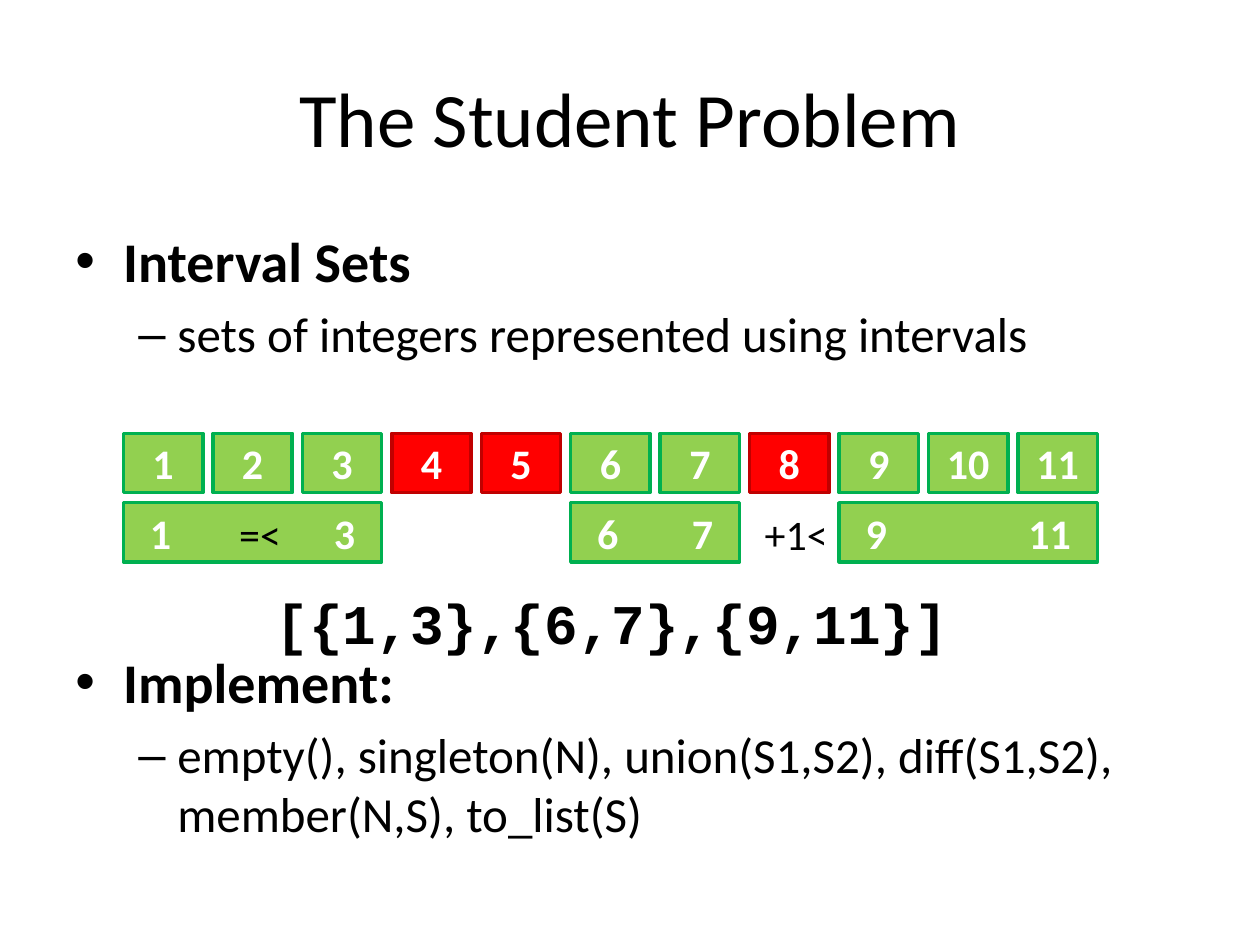
from dataclasses import dataclass

from lxml import etree
from pptx import Presentation
from pptx.dml.color import RGBColor
from pptx.enum.shapes import MSO_SHAPE
from pptx.enum.text import MSO_ANCHOR, PP_ALIGN
from pptx.oxml.ns import qn
from pptx.util import Inches, Pt

RECT = MSO_SHAPE.RECTANGLE
MIDDLE, TOP = MSO_ANCHOR.MIDDLE, MSO_ANCHOR.TOP
CENTER, LEFT = PP_ALIGN.CENTER, PP_ALIGN.LEFT


@dataclass(frozen=True)
class Theme:
    text: str = "000000"
    on_fill: str = "FFFFFF"
    member: tuple = ("92D050", "00B050")
    gap: tuple = ("FF0000", "C00000")
    font: str = "Calibri"
    code_font: str = "Courier New"
    title_size: int = 44
    head_size: int = 32
    item_size: int = 28
    cell_size: int = 24


THEME = Theme()
GRID_LEFT, CELL_W, CELL_H, PITCH = 0.98, 0.63, 0.47, 0.71
NUMBERS_TOP, INTERVALS_TOP = 3.44, 3.99
INTERVALS = [(1, 3), (6, 7), (9, 11)]
END_INSET = 0.21

# text, level, space before in points
OUTLINE = [
    ("Interval Sets", 0, 0),
    ("sets of integers represented using intervals", 1, 5.6),
    ("Implement:", 0, 163),
    ("empty(), singleton(N), union(S1,S2), diff(S1,S2), member(N,S), to_list(S)", 1, 5.6),
]
# bullet, left margin, hanging indent in inches, type size, bold
LEVELS = [
    ("•", 0.38, 0.38, THEME.head_size, True),
    ("–", 0.81, 0.31, THEME.item_size, False),
]


def write(p, text, size, color=THEME.text, bold=False, font=THEME.font):
    r = p.add_run()
    r.text = text
    for name, value in {"size": Pt(size), "bold": bold, "name": font}.items():
        setattr(r.font, name, value)
    r.font.color.rgb = RGBColor.from_string(color)


def add_text_box(s, left, top, width, height, anchor=TOP):
    box = s.shapes.add_textbox(Inches(left), Inches(top), Inches(width), Inches(height))
    tf = box.text_frame
    tf.word_wrap = True
    tf.vertical_anchor = anchor
    return tf


def add_block(s, first, last, top, colors):
    """Add a rectangle covering the grid columns first to last."""
    left = GRID_LEFT + (first - 1) * PITCH
    width = (last - first) * PITCH + CELL_W
    sp = s.shapes.add_shape(RECT, Inches(left), Inches(top), Inches(width), Inches(CELL_H))
    sp.shadow.inherit = False
    fill, line = colors
    sp.fill.solid()
    sp.fill.fore_color.rgb = RGBColor.from_string(fill)
    sp.line.color.rgb = RGBColor.from_string(line)
    sp.line.width = Pt(2)
    sp.text_frame.vertical_anchor = MIDDLE
    return sp.text_frame, width


def set_tabs(p, *stops):
    tabs = etree.SubElement(p._p.get_or_add_pPr(), qn("a:tabLst"))
    for pos, align in stops:
        etree.SubElement(tabs, qn("a:tab"), pos=str(Inches(pos)), algn=align)


def set_bullet(p, char, margin, hanging):
    pPr = p._p.get_or_add_pPr()
    pPr.set("marL", str(Inches(margin)))
    pPr.set("indent", str(-Inches(hanging)))
    etree.SubElement(pPr, qn("a:buFont"), typeface="Arial")
    etree.SubElement(pPr, qn("a:buChar"), char=char)


def add_title(s, text):
    p = add_text_box(s, 0.5, 0.3, 9, 1.25, MIDDLE).paragraphs[0]
    p.alignment = CENTER
    write(p, text, THEME.title_size)


def add_outline(s):
    tf = add_text_box(s, 0.5, 1.75, 9, 4.95)
    for i, (text, level, before) in enumerate(OUTLINE):
        p = tf.add_paragraph() if i else tf.paragraphs[0]
        char, margin, hanging, size, bold = LEVELS[level]
        p.level = level
        p.space_before = Pt(before)
        set_bullet(p, char, margin, hanging)
        write(p, text, size, bold=bold)


def add_number(s, n):
    inside = any(low <= n <= high for low, high in INTERVALS)
    tf, _ = add_block(s, n, n, NUMBERS_TOP, THEME.member if inside else THEME.gap)
    p = tf.paragraphs[0]
    p.alignment = CENTER
    write(p, str(n), THEME.cell_size, THEME.on_fill, True)


def add_interval(s, low, high):
    """Add an interval bar with its bounds at the two ends."""
    tf, width = add_block(s, low, high, INTERVALS_TOP, THEME.member)
    tf.margin_left, tf.margin_right = Inches(END_INSET), 0
    p = tf.paragraphs[0]
    p.alignment = LEFT
    set_tabs(p, (width - 2 * END_INSET, "r"))
    write(p, f"{low}\t{high}", THEME.cell_size, THEME.on_fill, True)


def add_relations(s):
    p = add_text_box(s, GRID_LEFT, INTERVALS_TOP, 8.19, 0.5).paragraphs[0]
    set_tabs(p, (0.82, "l"), (4.99, "l"))
    write(p, "\t=<\t+1<", THEME.cell_size)


def add_code(s):
    p = add_text_box(s, 2.09, 4.62, 5.91, 0.64).paragraphs[0]
    pairs = ",".join(f"{{{low},{high}}}" for low, high in INTERVALS)
    write(p, f"[{pairs}]", THEME.head_size, bold=True, font=THEME.code_font)


def main():
    prs = Presentation()
    prs.slide_width, prs.slide_height = Inches(10), Inches(7.5)
    s = prs.slides.add_slide(prs.slide_layouts[6])
    add_title(s, "The Student Problem")
    add_outline(s)
    for n in range(1, 12):
        add_number(s, n)
    for low, high in INTERVALS:
        add_interval(s, low, high)
    add_relations(s)
    add_code(s)
    prs.save("out.pptx")


if __name__ == "__main__":
    main()
